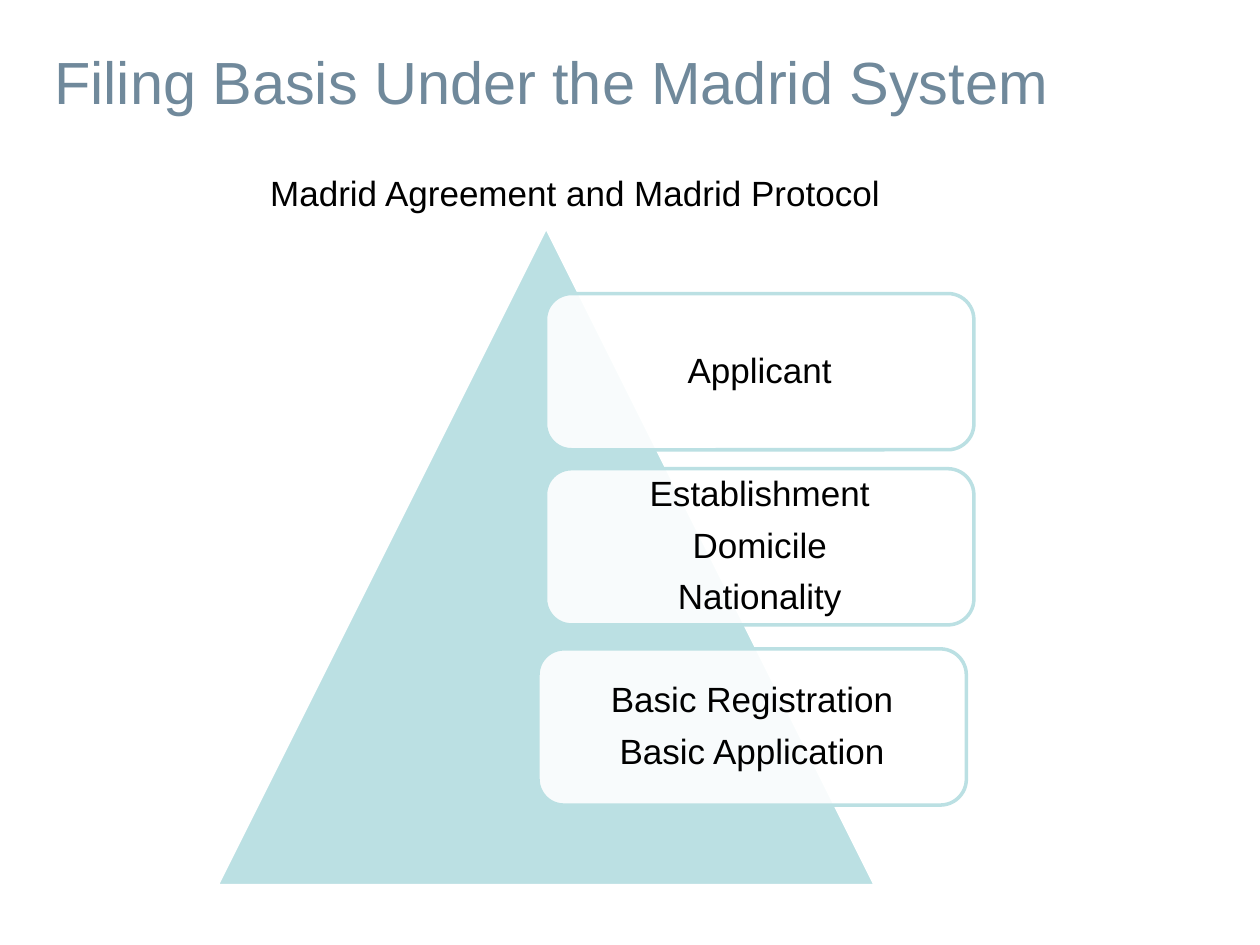
from lxml.etree import SubElement
from pptx import Presentation
from pptx.dml.color import RGBColor
from pptx.enum.shapes import MSO_SHAPE
from pptx.enum.text import MSO_ANCHOR, PP_ALIGN
from pptx.oxml.ns import qn
from pptx.util import Inches, Pt

BLACK, WHITE, SLATE, AQUA = "000000", "FFFFFF", "70899B", "BBE0E3"
CARDS = [
    (4.33, 2.33, ["Applicant"]),
    (4.33, 3.72, ["Establishment", "Domicile", "Nationality"]),
    (4.27, 5.15, ["Basic Registration", "Basic Application"]),
]


def color(value):
    return RGBColor.from_string(value)


class SlideBuilder:
    font_name = "Arial"
    body_size = 20
    title_size = 34
    line_width = 2

    def __init__(self, deck):
        self.page = deck.slides.add_slide(deck.slide_layouts[5])

    def style(self, para, size, text_color, align):
        para.alignment = align
        para.font.name = self.font_name
        para.font.size = Pt(size)
        para.font.color.rgb = color(text_color)

    def title(self, text, left, top, width, height):
        box = self.page.shapes.title
        box.left, box.top = Inches(left), Inches(top)
        box.width, box.height = Inches(width), Inches(height)
        frame = box.text_frame
        frame.text = text
        frame.vertical_anchor = MSO_ANCHOR.MIDDLE
        self.style(frame.paragraphs[0], self.title_size, SLATE, PP_ALIGN.LEFT)

    def heading(self, text, left, top, width, height):
        box = self.page.shapes.add_textbox(
            Inches(left), Inches(top), Inches(width), Inches(height))
        frame = box.text_frame
        frame.word_wrap = True
        frame.text = text
        self.style(frame.paragraphs[0], self.body_size, BLACK, PP_ALIGN.CENTER)

    def shape(self, kind, left, top, width, height, fill, line):
        shape = self.page.shapes.add_shape(
            kind, Inches(left), Inches(top), Inches(width), Inches(height))
        shape.shadow.inherit = False
        shape.fill.solid()
        shape.fill.fore_color.rgb = color(fill)
        shape.line.color.rgb = color(line)
        shape.line.width = Pt(self.line_width)
        return shape

    def card(self, lines, left, top, width, height):
        """Add a rounded, 90% opaque white box with centred lines of text."""
        card = self.shape(MSO_SHAPE.ROUNDED_RECTANGLE, left, top, width, height,
                          WHITE, AQUA)
        fill = card.fill._xPr.find(qn("a:solidFill"))
        SubElement(fill[0], qn("a:alpha"), val="90000")

        frame = card.text_frame
        frame.word_wrap = True
        frame.vertical_anchor = MSO_ANCHOR.MIDDLE
        frame.margin_left = frame.margin_right = Inches(0.08)
        frame.margin_top = frame.margin_bottom = Inches(0.08)
        frame.text = "\n".join(lines)
        for para in frame.paragraphs:
            para.line_spacing = 0.9
            para.space_after = Pt(8)
            self.style(para, self.body_size, BLACK, PP_ALIGN.CENTER)


def main():
    deck = Presentation()
    deck.slide_width, deck.slide_height = Inches(10), Inches(7.5)
    builder = SlideBuilder(deck)
    builder.title("Filing Basis Under the Madrid System", 0.33, 0.25, 9, 0.78)
    builder.heading("Madrid Agreement and Madrid Protocol", 1.06, 1.31, 7.01, 0.44)
    builder.shape(MSO_SHAPE.ISOSCELES_TRIANGLE, 1.72, 1.8, 5.23, 5.23, AQUA, WHITE)
    for left, top, lines in CARDS:
        builder.card(lines, left, top, 3.4, 1.24)
    deck.save("out.pptx")


if __name__ == "__main__":
    main()
